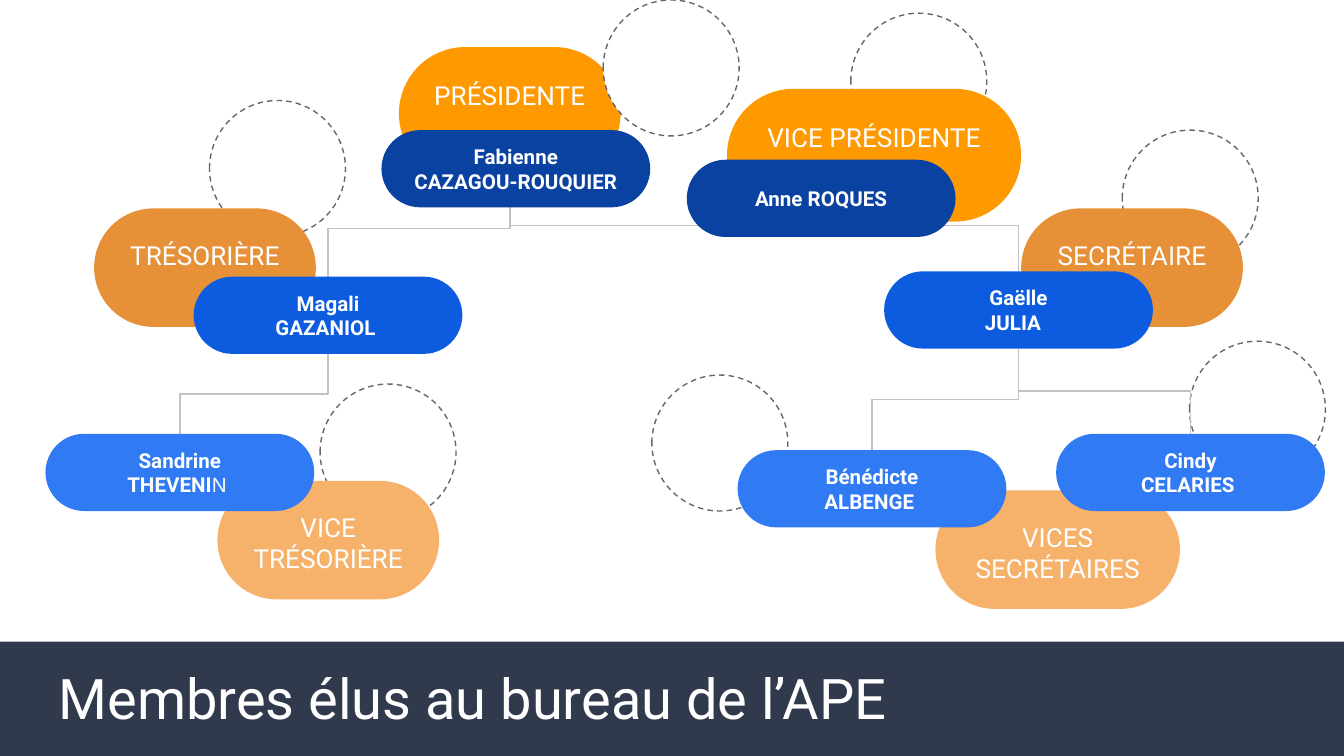
from collections import namedtuple

from lxml import etree
from pptx import Presentation
from pptx.dml.color import RGBColor
from pptx.enum import dml, shapes, text
from pptx.oxml import ns
from pptx.util import Cm, Pt

WHITE = RGBColor(0xFF, 0xFF, 0xFF)
SLATE = RGBColor(0x31, 0x39, 0x4D)
DASH_GREY = RGBColor(0x66, 0x66, 0x66)
LINE_GREY = RGBColor(0xC2, 0xC2, 0xC2)
ORANGES = [RGBColor(0xFF, 0x99, 0x00), RGBColor(0xE6, 0x91, 0x38), RGBColor(0xF6, 0xB2, 0x6B)]
BLUES = [RGBColor(0x09, 0x42, 0xA1), RGBColor(0x0D, 0x5C, 0xDF), RGBColor(0x30, 0x7A, 0xF3)]

Box = namedtuple("Box", "left top width height")
NAME_SIZE = (5.08, 1.46)
PHOTO_SIZE = 2.57

# Rank, lines, left, top, width, height (cm)
ROLES = [
    (0, ["PRÉSIDENTE"], 7.54, 0.89, 4.19, 2.51),
    (0, ["VICE PRÉSIDENTE"], 13.74, 1.68, 5.56, 2.51),
    (1, ["TRÉSORIÈRE"], 1.78, 3.94, 4.19, 2.24),
    (1, ["SECRÉTAIRE"], 19.3, 3.94, 4.19, 2.24),
    (2, ["VICE", "TRÉSORIÈRE"], 4.11, 9.09, 4.19, 2.24),
    (2, ["VICES", "SECRÉTAIRES"], 17.68, 9.27, 4.62, 2.24),
]
# Rank, first name, surname, left, top (cm)
NAMES = [
    (0, "Fabienne", "CAZAGOU-ROUQUIER", 7.21, 2.46),
    (0, "Anne ROQUES", "", 12.98, 3.02),
    (1, "Magali", "GAZANIOL ", 3.66, 5.23),
    (1, "Gaëlle", "JULIA \t", 16.71, 5.13),
    (2, "Sandrine", "THEVENI", 0.86, 8.2),
    (2, "Bénédicte", "ALBENGE ", 13.94, 8.51),
    (2, "Cindy", "CELARIES ", 19.96, 8.2),
]
PHOTOS = [(21.21, 2.46), (12.32, 7.09), (22.48, 6.45), (6.05, 7.26), (16.08, 0.25), (3.96, 1.9)]
PRESIDENT_PHOTO = (11.4, 0)
LINKS = [("PRÉSIDENTE", "Gaëlle"), ("PRÉSIDENTE", "Magali"), ("Magali", "Sandrine"),
         ("Gaëlle", "Cindy"), ("Gaëlle", "Bénédicte")]


def add_span(para, words, size, bold=False, font="Roboto"):
    span = para.add_run()
    span.text = words
    span.font.size, span.font.bold, span.font.name = Pt(size), bold, font
    span.font.color.rgb = WHITE


def add_plain_shape(page, kind, box, fill):
    shape = page.shapes.add_shape(kind, *box)
    shape.shadow.inherit = False
    shape.fill.solid()
    shape.fill.fore_color.rgb = fill
    shape.line.fill.background()
    return shape


def add_pill(page, box, fill, lines, size, bold, anchor):
    pill = add_plain_shape(page, shapes.MSO_SHAPE.ROUNDED_RECTANGLE, box, fill)
    pill.adjustments[0] = 0.5
    frame = pill.text_frame
    frame.word_wrap = True
    frame.vertical_anchor = anchor
    frame.margin_left = frame.margin_right = frame.margin_top = frame.margin_bottom = Cm(0.25)
    for index, line in enumerate(lines):
        para = frame.add_paragraph() if index else frame.paragraphs[0]
        para.alignment = text.PP_ALIGN.CENTER
        add_span(para, line, size, bold)
    return pill


def add_photo_ring(page, box):
    ring = add_plain_shape(page, shapes.MSO_SHAPE.OVAL, box, WHITE)
    ring.line.color.rgb = DASH_GREY
    ring.line.width = Pt(0.75)
    ring.line.dash_style = dml.MSO_LINE.DASH


def add_branch(page, upper, lower):
    """Elbow from the bottom of one shape to the top of another, leaving vertically."""
    x1, y1 = upper.left + upper.width // 2, upper.top + upper.height
    x2, y2 = lower.left + lower.width // 2, lower.top
    drop, reach = y2 - y1, abs(x2 - x1)
    # The frame is turned a quarter, so its width is the drop and its height the reach.
    left, top = (x1 + x2 - drop) // 2, (y1 + y2 - reach) // 2
    ends = (left, left + drop)
    begin, end = ends[::-1] if x2 > x1 else ends
    branch = page.shapes.add_connector(shapes.MSO_CONNECTOR.ELBOW, begin, top, end, top + reach)
    properties = branch.element.spPr
    properties.find(ns.qn("a:xfrm")).set("rot", str(270 * 60000))
    branch.line.color.rgb = LINE_GREY
    branch.line.width = Pt(0.75)
    etree.SubElement(properties, ns.qn("a:effectLst"))


def add_org_chart(page, box):
    def place(left, top, width, height):
        return Box(box.left + Cm(left), box.top + Cm(top), Cm(width), Cm(height))

    def photo(position):
        add_photo_ring(page, place(*position, PHOTO_SIZE, PHOTO_SIZE))

    for position in PHOTOS:
        photo(position)
    pills = {}
    for rank, lines, *area in ROLES:
        pills[lines[0]] = add_pill(page, place(*area), ORANGES[rank], lines, 14, False,
                                   text.MSO_ANCHOR.TOP)
    photo(PRESIDENT_PHOTO)
    for rank, first, surname, *position in NAMES:
        lines = [first, surname] if surname else [first]
        pills[first] = add_pill(page, place(*position, *NAME_SIZE), BLUES[rank], lines, 11, True,
                                text.MSO_ANCHOR.MIDDLE)
    add_span(pills["Sandrine"].text_frame.paragraphs[1], "N ", 11, font="Arial")

    first_name = pills["Fabienne"].element
    for upper, lower in LINKS:
        add_branch(page, pills[upper], pills[lower])
        first_name.addprevious(page.shapes[-1].element)


def add_title_bar(page, box):
    add_plain_shape(page, shapes.MSO_SHAPE.RECTANGLE, box, SLATE)
    title = page.shapes.title
    title.left, title.top = box.left + Cm(0.86), box.top + Cm(0.41)
    title.width, title.height = Cm(22.17), Cm(1.27)
    frame = title.text_frame
    frame.word_wrap = True
    frame.auto_size = text.MSO_AUTO_SIZE.NONE
    frame.vertical_anchor = text.MSO_ANCHOR.MIDDLE
    frame.margin_left = frame.margin_right = frame.margin_top = frame.margin_bottom = Cm(0.25)
    para = frame.paragraphs[0]
    para.alignment = text.PP_ALIGN.LEFT
    add_span(para, "Membres élus au bureau de l’APE", 30)
    title.element.getparent().append(title.element)


def main():
    deck = Presentation()
    deck.slide_width, deck.slide_height = Cm(25.4), Cm(14.29)
    page = deck.slides.add_slide(deck.slide_layouts.get_by_name("Title Only"))
    bar_top = Cm(12.13)
    add_org_chart(page, Box(0, 0, deck.slide_width, bar_top))
    add_title_bar(page, Box(0, bar_top, deck.slide_width, deck.slide_height - bar_top))
    deck.save("out.pptx")


if __name__ == "__main__":
    main()
